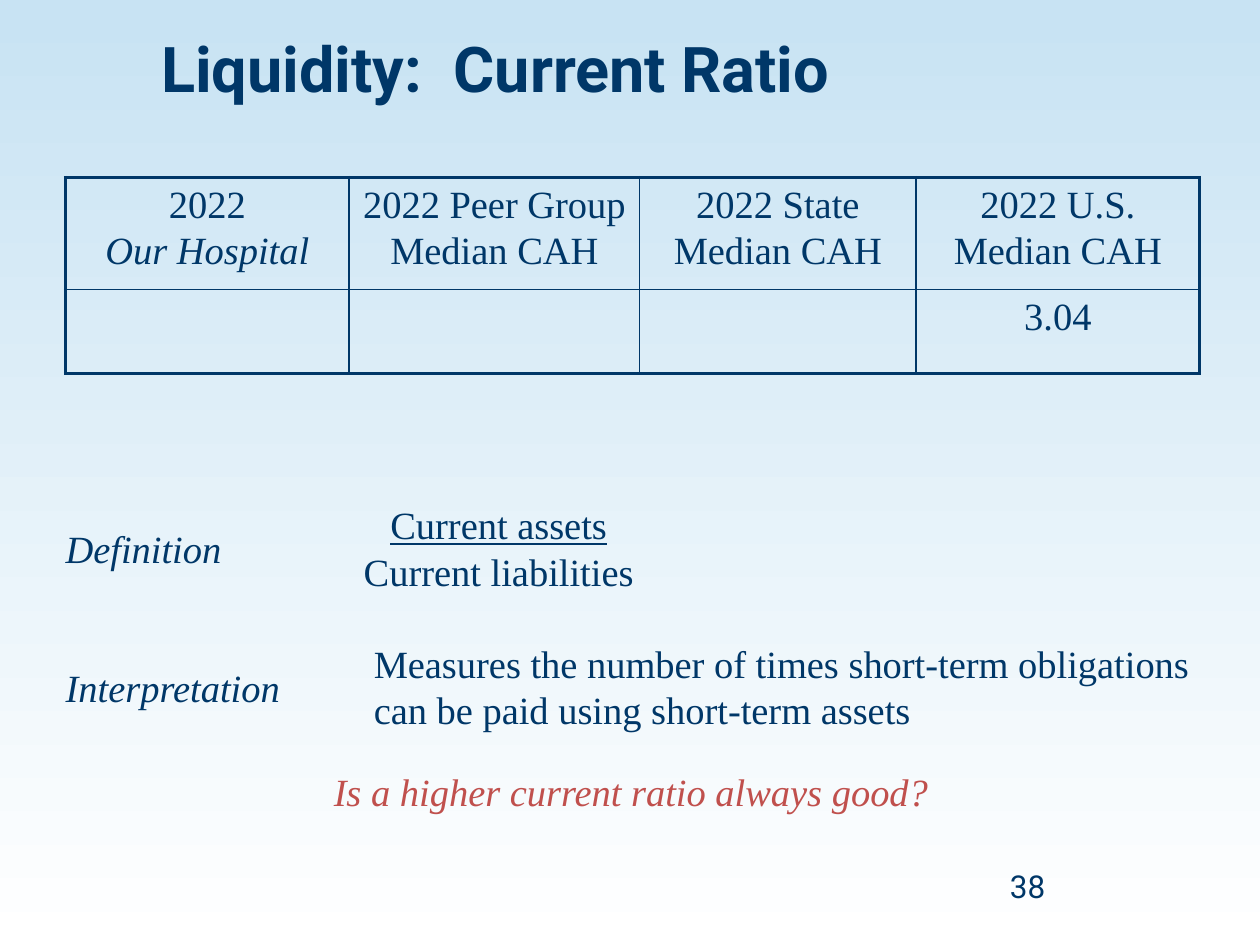
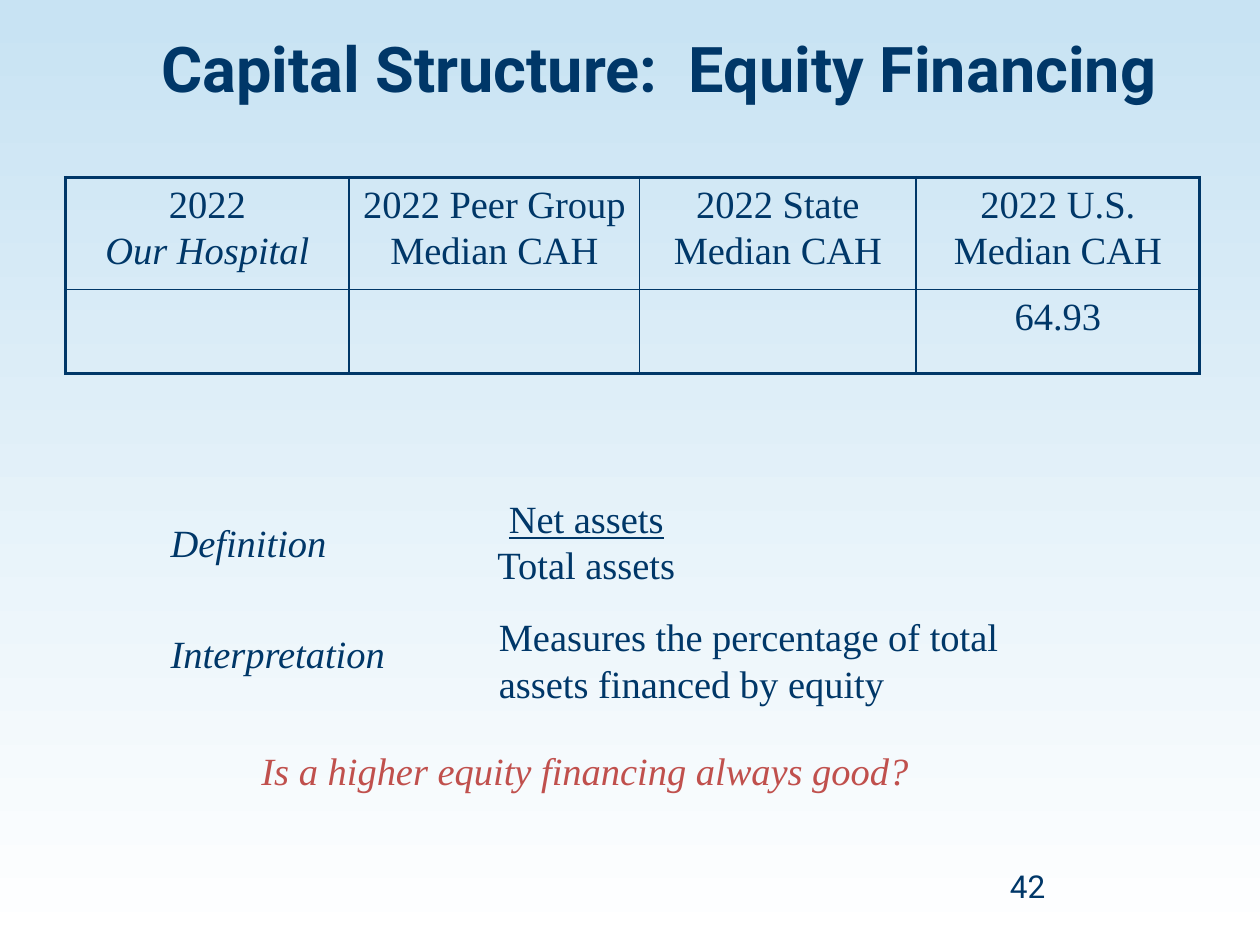
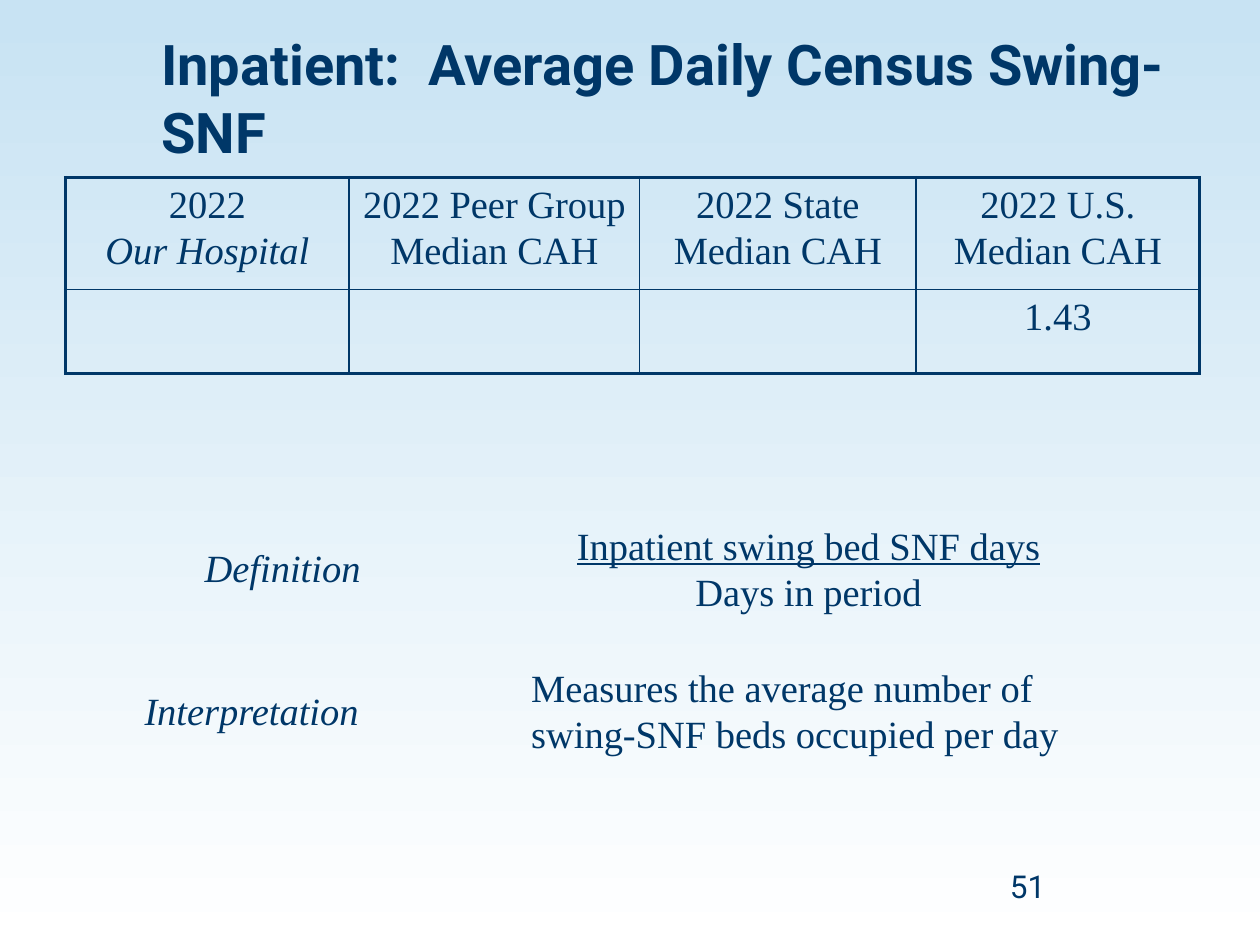
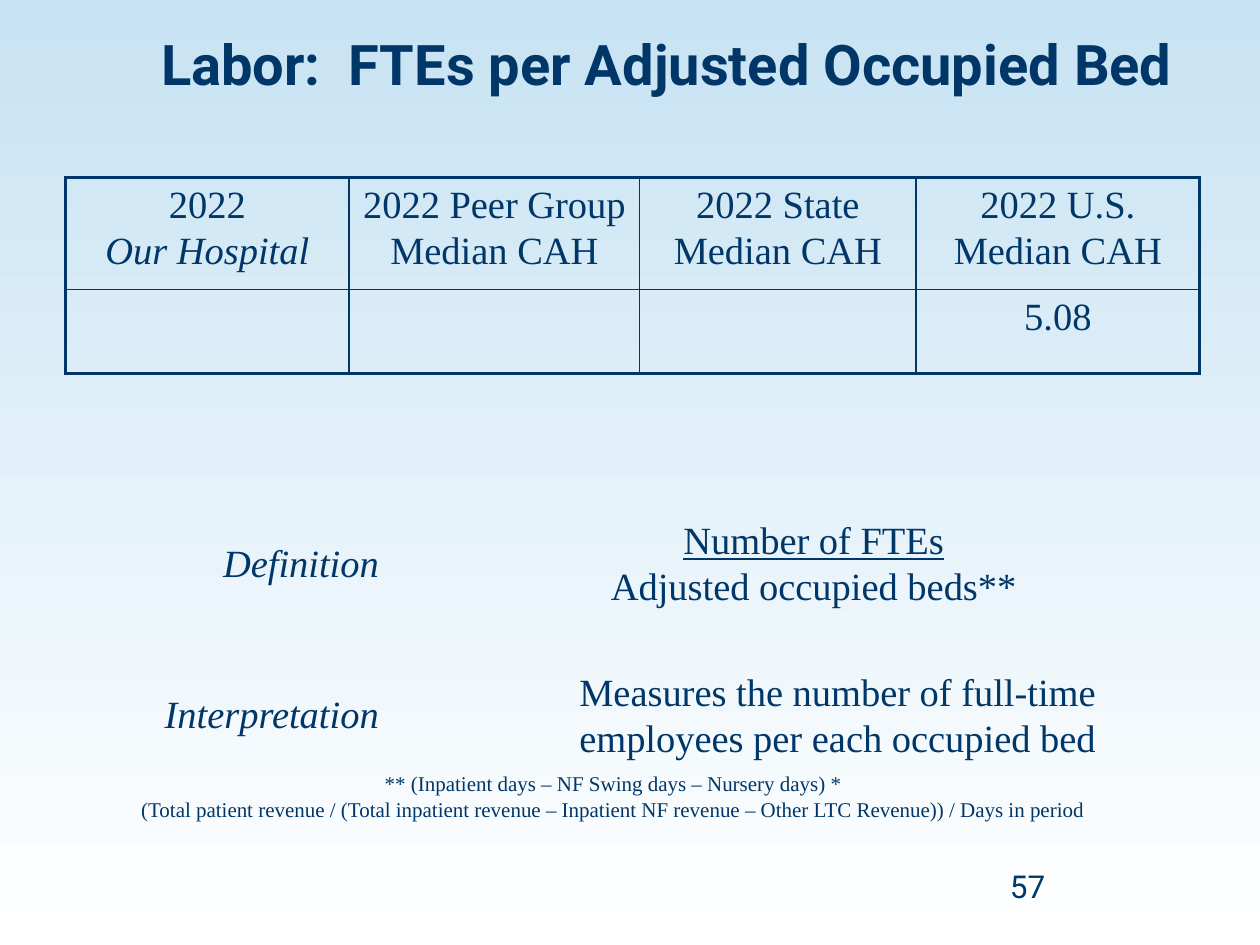
"""Build four hospital indicator slides with medians, definitions and questions."""
from lxml import etree
from pptx import Presentation
from pptx.dml.color import RGBColor
from pptx.enum import text as t
from pptx.oxml import ns
from pptx.util import Pt

NAVY = RGBColor(0x00, 0x37, 0x68)
RED = RGBColor(0xC0, 0x50, 0x4D)
SKY = RGBColor(0xC8, 0xE3, 0xF3)
WHITE = RGBColor(0xFF, 0xFF, 0xFF)

TITLE = {"name": "Roboto", "size": Pt(36), "bold": True}
LONG_TITLE = {**TITLE, "size": Pt(32)}
PAGE = {"name": "Roboto", "size": Pt(18)}
BODY = {"name": "Times New Roman", "size": Pt(22)}
ITALIC = {**BODY, "italic": True}
UNDERLINED = {**BODY, "underline": True}
NOTE = {**BODY, "size": Pt(12)}

COLUMNS = (162, 166, 158, 162)
ROWS = (64, 48)
HEADINGS = (("2022", "Our Hospital"), ("2022 Peer Group", "Median CAH"),
            ("2022 State", "Median CAH"), ("2022 U.S.", "Median CAH"))
OUTER, INNER = 2.25, 1

SLIDES = (
    {"title": ("Liquidity:  Current Ratio", 595, TITLE), "page": "38", "median": "3.04",
     "ratio": ("Current assets", "Current liabilities", (198, 283, 174, 60)),
     "meaning": ("Measures the number of times short-term obligations "
                 "can be paid using short-term assets", (206.5, 362, 486, 60)),
     "labels": ((30, 296.5), (30, 376)),
     "question": ("Is a higher current ratio always good?", (183, 435.5, 355, 34))},
    {"title": ("Capital Structure:  Equity Financing", 617, TITLE), "page": "42", "median": "64.93",
     "ratio": ("Net assets", "Total assets", (266, 279.5, 138, 60)),
     "meaning": ("Measures the percentage of total assets financed by equity",
                 (278, 347, 306, 60)),
     "labels": ((90, 293), (90, 356.5)),
     "question": ("Is a higher equity financing always good?", (142, 423.5, 384.5, 34))},
    {"title": ("Inpatient:  Average Daily Census Swing-SNF", 605, LONG_TITLE),
     "page": "51", "median": "1.43",
     "ratio": ("Inpatient swing bed SNF days", "Days in period", (318, 294.5, 288, 60)),
     "meaning": ("Measures the average number of swing-SNF beds occupied per day",
                 (296.5, 376, 330, 60)),
     "labels": ((109.5, 307.5), (75, 389))},
    {"title": ("Labor:  FTEs per Adjusted Occupied Bed", 623, LONG_TITLE),
     "page": "57", "median": "5.08",
     "ratio": ("Number of FTEs", "Adjusted occupied beds**", (336, 291.5, 258, 60)),
     "meaning": ("Measures the number of full-time employees per each occupied bed",
                 (324, 378, 318, 60)),
     "labels": ((120, 304.5), (86.5, 391)),
     "note": (("** (Inpatient days – NF Swing days – Nursery days) *",
               "(Total patient revenue / (Total inpatient revenue – Inpatient NF revenue "
               "– Other LTC Revenue)) / Days in period"), (71.5, 437, 558, 36))},
)


def write(tf, lines, centred=False, color=NAVY, gap=0):
    """Fill a text frame with (text, format) lines, one paragraph each."""
    for i, (line, fmt) in enumerate(lines):
        p = tf.add_paragraph() if i else tf.paragraphs[0]
        p.alignment = t.PP_ALIGN.CENTER if centred else t.PP_ALIGN.LEFT
        if i and gap:
            p.space_before = Pt(gap)
        r = p.add_run()
        r.text = line
        r.font.color.rgb = color
        for key, value in fmt.items():
            setattr(r.font, key, value)


def add_text(s, box, lines, wrap=True, grow=True, **style):
    """Add a text box at (left, top, width, height) in points."""
    tf = s.shapes.add_textbox(*map(Pt, box)).text_frame
    tf.word_wrap = wrap
    tf.auto_size = t.MSO_AUTO_SIZE.SHAPE_TO_FIT_TEXT if grow else t.MSO_AUTO_SIZE.NONE
    write(tf, lines, **style)


def add_border(cell, side, width):
    """Draw one side (L, R, T or B) of a table cell."""
    ln = etree.SubElement(cell._tc.get_or_add_tcPr(), ns.qn(f"a:ln{side}"), w=str(Pt(width)))
    fill = etree.SubElement(ln, ns.qn("a:solidFill"))
    etree.SubElement(fill, ns.qn("a:srgbClr"), val=str(NAVY))


def add_medians(s, median):
    """Add the comparison table with a heavy frame and thin inner lines."""
    table = s.shapes.add_table(len(ROWS), len(COLUMNS), Pt(37.5), Pt(101.5),
                               Pt(sum(COLUMNS)), Pt(sum(ROWS))).table
    table.first_row = table.horz_banding = False
    for col, width in zip(table.columns, COLUMNS):
        col.width = Pt(width)
    for row, height in zip(table.rows, ROWS):
        row.height = Pt(height)
    last_row, last_col = len(ROWS) - 1, len(COLUMNS) - 1
    for i in range(len(ROWS)):
        for j in range(len(COLUMNS)):
            cell = table.cell(i, j)
            edges = {"L": j == 0, "R": j == last_col, "T": i == 0, "B": i == last_row}
            for side, outer in edges.items():
                add_border(cell, side, OUTER if outer else INNER)
            cell.fill.background()
    for j, heading in enumerate(HEADINGS):
        lines = [(line, ITALIC if line == "Our Hospital" else BODY) for line in heading]
        write(table.cell(0, j).text_frame, lines, centred=True, gap=2.4)
    write(table.cell(last_row, last_col).text_frame, [(median, BODY)], centred=True)


def add_frame(s, title, page):
    """Add the title and the page number."""
    words, width, fmt = title
    add_text(s, (85, 13.5, width, 78.5), [(words, fmt)], grow=False)
    add_text(s, (570, 492, 150, 36), [(page, PAGE)], grow=False)


def add_explanation(s, ratio, meaning, labels):
    """Add the ratio and its meaning, each with its label."""
    top, bottom, box = ratio
    add_text(s, box, [(top, UNDERLINED), (bottom, BODY)], centred=True)
    words, box = meaning
    add_text(s, box, [(words, BODY)])
    for word, width, place in zip(("Definition", "Interpretation"), (104, 137.5), labels):
        add_text(s, (*place, width, 34), [(word, ITALIC)], wrap=False, centred=True)


def set_background(master):
    """Give all slides the sky gradient, from top to bottom."""
    fill = master.background.fill
    fill.gradient()
    fill.gradient_angle = 270
    for stop, color, position in zip(fill.gradient_stops, (SKY, WHITE), (0.01, 1)):
        stop.color.rgb = color
        stop.position = position


def main():
    """Build and save the slides."""
    prs = Presentation()
    prs.slide_width, prs.slide_height = Pt(720), Pt(540)
    set_background(prs.slide_master)
    for data in SLIDES:
        s = prs.slides.add_slide(prs.slide_layouts[6])
        add_frame(s, data["title"], data["page"])
        add_explanation(s, data["ratio"], data["meaning"], data["labels"])
        if "question" in data:
            words, box = data["question"]
            add_text(s, box, [(words, ITALIC)], wrap=False, centred=True, color=RED)
        if "note" in data:
            lines, box = data["note"]
            add_text(s, box, [(line, NOTE) for line in lines], centred=True)
        add_medians(s, data["median"])
    prs.save("out.pptx")


if __name__ == "__main__":
    main()
